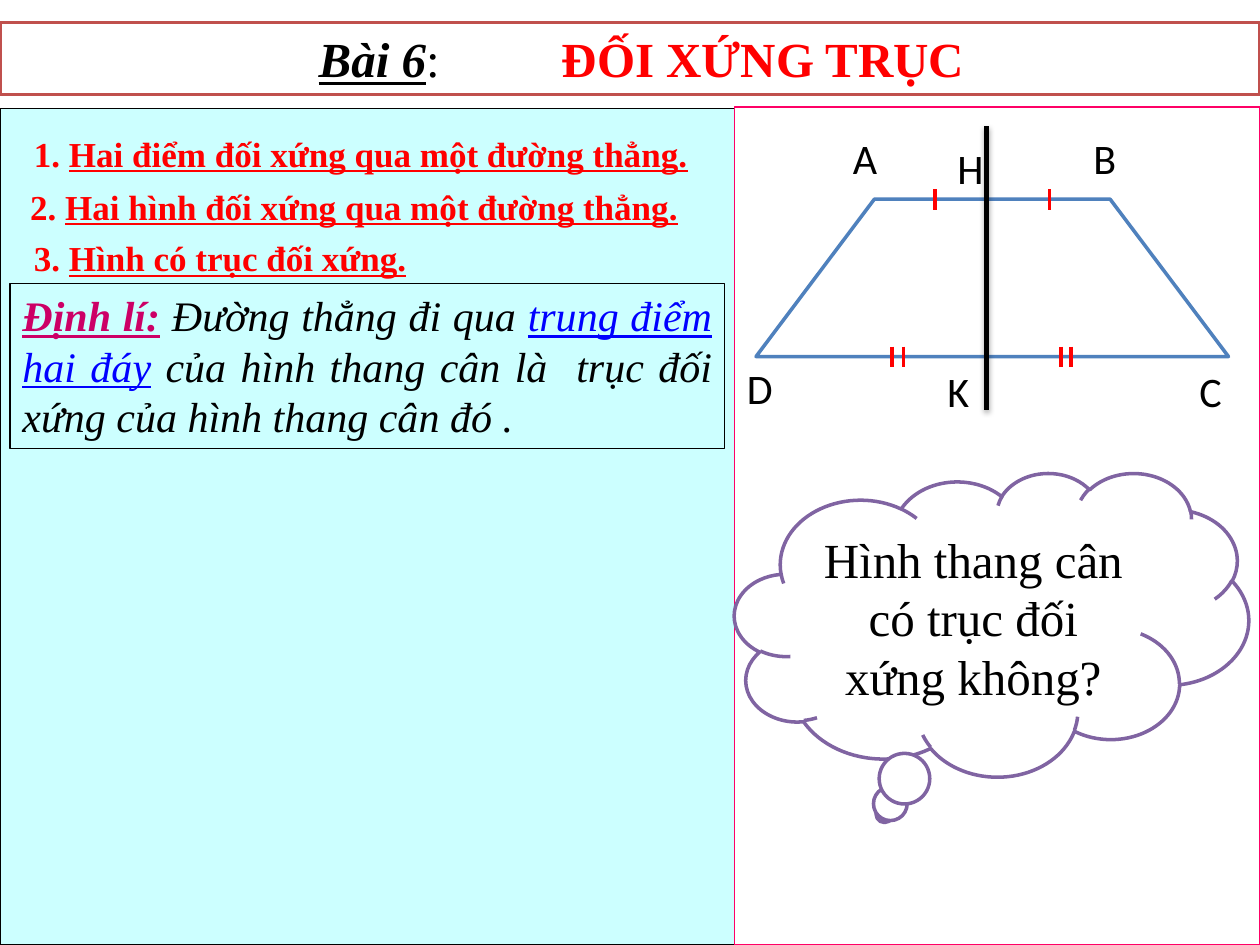
from lxml import etree
from pptx import Presentation
from pptx.dml.color import RGBColor
from pptx.enum import shapes, text
from pptx.oxml.ns import qn
from pptx.util import Inches, Pt

BLACK = RGBColor(0x00, 0x00, 0x00)
WHITE = RGBColor(0xFF, 0xFF, 0xFF)
RED = RGBColor(0xFF, 0x00, 0x00)
BLUE = RGBColor(0x00, 0x00, 0xFF)
CYAN = RGBColor(0xCC, 0xFF, 0xFF)
PINK = RGBColor(0xFF, 0x00, 0x66)
MAGENTA = RGBColor(0xCC, 0x00, 0x66)
BRICK = RGBColor(0xC0, 0x50, 0x4D)
STEEL = RGBColor(0x4F, 0x81, 0xBD)
PURPLE = RGBColor(0x80, 0x64, 0xA2)
SERIF = "Times New Roman"

presentation = Presentation()
presentation.slide_width = Inches(10)
presentation.slide_height = Inches(7.5)
slide = presentation.slides.add_slide(presentation.slide_layouts[6])


def style_shape(shape, fill, line, width):
    shape.shadow.inherit = False
    if fill is None:
        shape.fill.background()
    else:
        shape.fill.solid()
        shape.fill.fore_color.rgb = fill
    shape.line.color.rgb = line
    shape.line.width = Pt(width)


def write_runs(shape, runs, size, font=SERIF, align=text.PP_ALIGN.LEFT, anchor=text.MSO_ANCHOR.TOP):
    frame = shape.text_frame
    frame.word_wrap = True
    frame.vertical_anchor = anchor
    paragraph = frame.paragraphs[0]
    paragraph.alignment = align
    for words, color, marks in runs:
        run = paragraph.add_run()
        run.text = words
        run.font.name = font
        run.font.size = Pt(size)
        run.font.color.rgb = color
        run.font.bold = "b" in marks
        run.font.italic = "i" in marks
        run.font.underline = "u" in marks


panels = [
    (0, 0.86, 5.83, 6.64, CYAN, BLACK, 0.75),
    (5.83, 0.85, 4.17, 6.65, WHITE, PINK, 0.75),
    (0, 0.18, 10, 0.57, WHITE, BRICK, 2),
]
for left, top, width, height, fill, line, weight in panels:
    panel = slide.shapes.add_shape(
        shapes.MSO_SHAPE.RECTANGLE, Inches(left), Inches(top), Inches(width), Inches(height))
    style_shape(panel, fill, line, weight)

title = panel
write_runs(title, [("Bài 6", BLACK, "biu"), (":\t", BLACK, ""), ("ĐỐI XỨNG TRỤC", RED, "b")], 28)
title.text_frame.margin_left = Inches(2.53)
title_properties = title.text_frame.paragraphs[0]._p.get_or_add_pPr()
tab_list = etree.SubElement(title_properties, qn("a:tabLst"))
etree.SubElement(tab_list, qn("a:tab"), pos=str(Inches(1.93)), algn="l")

headings = [
    (0.17, 1, "1. ", "Hai điểm đối xứng qua một đường thẳng."),
    (0.14, 1.42, "2. ", "Hai hình đối xứng qua một đường thẳng."),
    (0.17, 1.83, "3. ", "Hình có trục đối xứng."),
]
for left, top, number, words in headings:
    heading = slide.shapes.add_textbox(Inches(left), Inches(top), Inches(5.58), Inches(0.43))
    write_runs(heading, [(number, RED, "b"), (words, RED, "bu")], 20)

builder = slide.shapes.build_freeform(Inches(6), Inches(2.83))
builder.add_line_segments(
    [(Inches(x), Inches(y)) for x, y in [(6.94, 1.58), (8.81, 1.58), (9.75, 2.83)]], close=True)
trapezoid = builder.convert_to_shape()
style_shape(trapezoid, WHITE, STEEL, 2)

lines = [(7.83, 1, 3.25, BLACK, 3)]
lines += [(x, 1.5, 1.67, RED, 2) for x in (7.42, 8.33)]
lines += [(x, 2.75, 2.91, RED, 2) for x in (7.08, 7.17, 8.42, 8.5)]
for x, top, bottom, color, weight in lines:
    connector = slide.shapes.add_connector(
        shapes.MSO_CONNECTOR.STRAIGHT, Inches(x), Inches(top), Inches(x), Inches(bottom))
    connector.line.color.rgb = color
    connector.line.width = Pt(weight)
    effects = etree.SubElement(connector._element.spPr, qn("a:effectLst"))
    if color == BLACK:
        shadow = etree.SubElement(
            effects, qn("a:outerShdw"), blurRad="40000", dist="23000", dir="5400000", rotWithShape="0")
        shadow_color = etree.SubElement(shadow, qn("a:srgbClr"), val="000000")
        etree.SubElement(shadow_color, qn("a:alpha"), val="35000")

points = [
    ("A", 6.67, 1), ("B", 8.58, 1), ("C", 9.42, 2.85),
    ("D", 5.83, 2.83), ("H", 7.5, 1.08), ("K", 7.42, 2.85),
]
for letter, left, top in points:
    label = slide.shapes.add_textbox(Inches(left), Inches(top), Inches(0.42), Inches(0.5))
    write_runs(label, [(letter, BLACK, "")], 24, "Calibri")

cloud = slide.shapes.add_shape(
    shapes.MSO_SHAPE.CLOUD_CALLOUT, Inches(5.83), Inches(3.75), Inches(4.08), Inches(2.41))
style_shape(cloud, WHITE, PURPLE, 2)
write_runs(cloud, [("Hình thang cân có trục đối xứng không?", BLACK, "")], 28,
           align=text.PP_ALIGN.CENTER, anchor=text.MSO_ANCHOR.MIDDLE)

theorem = slide.shapes.add_shape(
    shapes.MSO_SHAPE.RECTANGLE, Inches(0.08), Inches(2.25), Inches(5.67), Inches(1.31))
style_shape(theorem, None, BLACK, 0.75)
write_runs(theorem, [
    ("Định lí:", MAGENTA, "biu"),
    (" ", BLUE, ""),
    ("Đường thẳng đi qua ", BLACK, "i"),
    ("trung điểm hai đáy", BLUE, "iu"),
    (" ", BLUE, "i"),
    ("của hình thang cân là  trục đối xứng của hình thang cân đó .", BLACK, "i"),
], 24, align=text.PP_ALIGN.JUSTIFY)

presentation.save("out.pptx")
